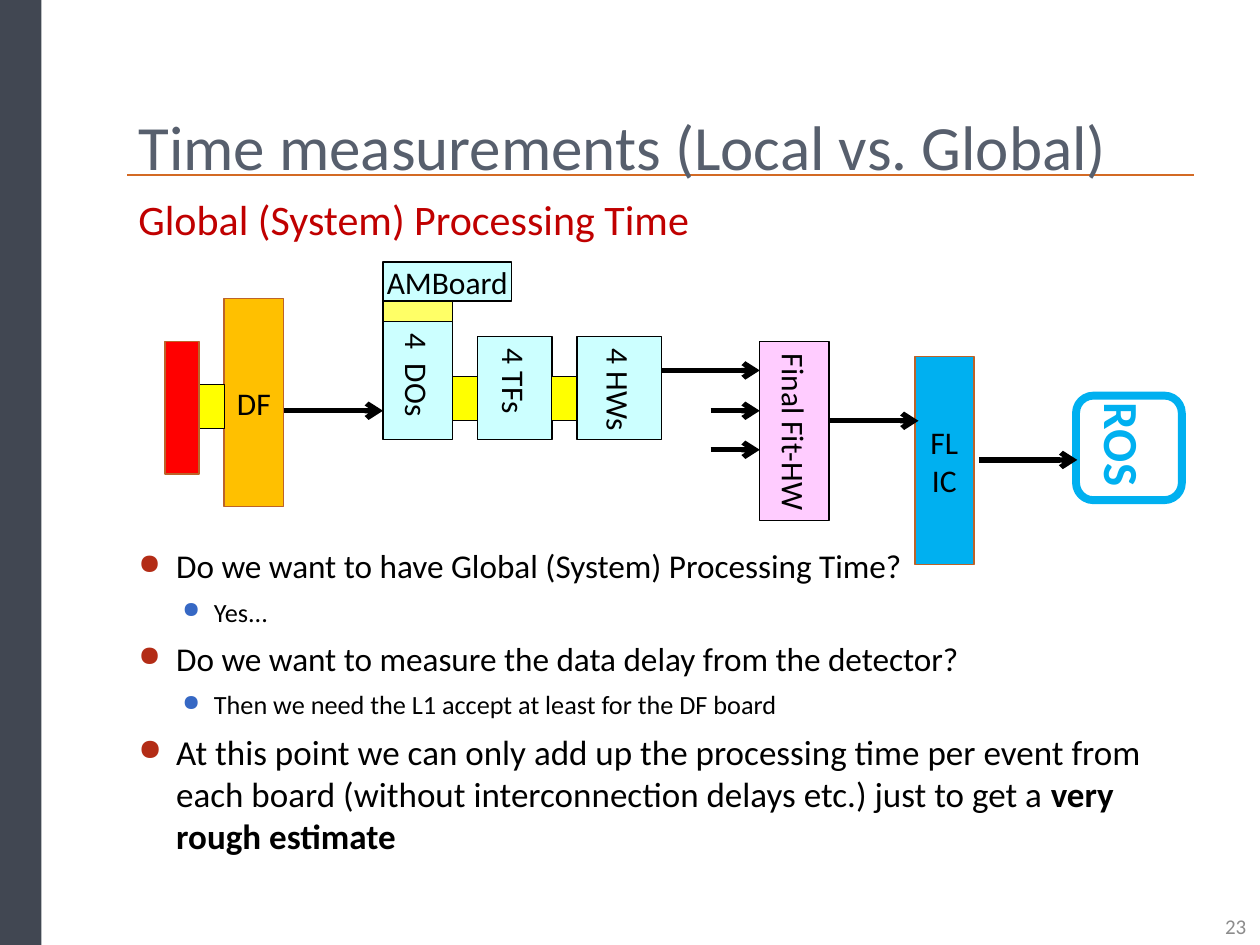
from pptx import Presentation
from pptx.dml.color import RGBColor
from pptx.enum import shapes, text
from pptx.oxml.ns import qn
from pptx.util import Inches, Pt
from lxml import etree

BLACK = RGBColor(0, 0, 0)
SLATE = RGBColor(0x41, 0x47, 0x52)
TITLE_GREY = RGBColor(0x57, 0x5F, 0x6D)
PAGE_GREY = RGBColor(0x8C, 0x8C, 0x8C)
RULE_ORANGE = RGBColor(0xD3, 0x6A, 0x24)
BROWN = RGBColor(0xBC, 0x63, 0x29)
CRIMSON = RGBColor(0xC0, 0, 0)
PINK = RGBColor(0xFF, 0xCC, 0xFF)
CYAN = RGBColor(0xCC, 0xFF, 0xFF)
YELLOW = RGBColor(0xFF, 0xFF, 0)
PALE_YELLOW = RGBColor(0xFF, 0xFF, 0x66)
AMBER = RGBColor(0xFF, 0xC0, 0)
SKY = RGBColor(0, 0xB0, 0xF0)
RED = RGBColor(0xFF, 0, 0)

# Boards and links, back to front: label, box, fill, line, line width, vertical, wrap
BOARDS = [
    ("Final Fit-HW", (6.03, 2.71, 0.55, 1.42), PINK, BLACK, 0.75, True, False),
    ("4  DOs", (3.04, 2.55, 0.55, 0.94), CYAN, BLACK, 0.75, True, False),
    ("AMBoard", (3.04, 2.08, 1.02, 0.31), CYAN, BLACK, 0.75, False, False),
    ("", (3.59, 2.99, 0.2, 0.35), YELLOW, BLACK, 0.75, False, True),
    ("4 TFs", (3.79, 2.67, 0.59, 0.82), CYAN, BLACK, 0.75, True, False),
    ("", (4.38, 2.99, 0.24, 0.35), YELLOW, BLACK, 0.75, False, True),
    ("4 HWs", (4.58, 2.67, 0.67, 0.82), CYAN, BLACK, 0.75, True, False),
    ("", (3.04, 2.39, 0.55, 0.16), PALE_YELLOW, BLACK, 0.75, False, True),
    ("DF", (1.78, 2.37, 0.47, 1.65), AMBER, BROWN, 1, False, True),
    ("FLIC", (7.26, 2.83, 0.47, 1.65), SKY, BROWN, 1, False, True),
    ("", (1.58, 3.05, 0.2, 0.35), YELLOW, BLACK, 0.75, False, True),
    ("", (1.31, 2.71, 0.27, 1.05), RED, BROWN, 1, False, True),
]
# Data flow arrows: start x, end x, y
ARROWS = [(2.25, 3.04, 3.26), (5.25, 6.03, 2.94), (5.64, 6.03, 3.26),
          (5.64, 6.03, 3.57), (6.59, 7.29, 3.34), (7.77, 8.55, 3.65)]
# Level, size, runs of (text, bold)
POINTS = [
    (0, 19, [("Do we want to have Global (System) Processing Time?", False)]),
    (1, 15, [("Yes...", False)]),
    (0, 19, [("Do we want to measure the data delay from the detector?", False)]),
    (1, 15, [("Then we need the L1 accept at least for the DF board", False)]),
    (0, 20, [("At this point we can only add up the processing time per event from "
              "each board (without interconnection delays etc.) just to get a ", False),
             ("very rough estimate", True)]),
]
# Per level: left margin, hanging indent, bullet colour
LEVELS = [(0.3, -0.3, "B32C16"), (0.6, -0.25, "3668C4")]

prs = Presentation()
prs.slide_width, prs.slide_height = Inches(10), Inches(7.5)
slide = prs.slides.add_slide(prs.slide_layouts[6])


def write(paragraph, words, size, color, bold=False):
    run = paragraph.add_run()
    run.text = words
    run.font.color.rgb = color
    for name, value in {"name": "Calibri", "size": Pt(size), "bold": bold}.items():
        setattr(run.font, name, value)


def add_box(kind, box, fill=None, line=None, width=0.75):
    part = slide.shapes.add_shape(kind, *map(Inches, box))
    part.shadow.inherit = False
    if fill is None:
        part.fill.background()
    else:
        part.fill.solid()
        part.fill.fore_color.rgb = fill
    if line is None:
        part.line.fill.background()
    else:
        part.line.color.rgb = line
        part.line.width = Pt(width)
    return part


def add_line(start, end, color, width, arrow=False):
    line = slide.shapes.add_connector(shapes.MSO_CONNECTOR.STRAIGHT,
                                      *map(Inches, start + end))
    line.line.color.rgb = color
    line.line.width = Pt(width)
    if arrow:
        etree.SubElement(line.line._get_or_add_ln(), qn("a:tailEnd"), type="arrow")
    etree.SubElement(line._element.spPr, qn("a:effectLst"))


def add_text(box, words="", size=18, color=BLACK, bold=False, align=text.PP_ALIGN.LEFT,
             **frame_format):
    label = slide.shapes.add_textbox(*map(Inches, box))
    frame = label.text_frame
    for name, value in ({"word_wrap": True} | frame_format).items():
        setattr(frame, name, value)
    frame.paragraphs[0].alignment = align
    if words:
        write(frame.paragraphs[0], words, size, color, bold)
    return label


def add_bullet(paragraph, level):
    margin, indent, color = LEVELS[level]
    props = paragraph._p.get_or_add_pPr()
    props.set("marL", str(Inches(margin)))
    props.set("indent", str(Inches(indent)))
    bullet_color = etree.SubElement(props, qn("a:buClr"))
    etree.SubElement(bullet_color, qn("a:srgbClr"), val=color)
    etree.SubElement(props, qn("a:buSzPct"), val="85000")
    etree.SubElement(props, qn("a:buChar"), char="●")


# Side band, title and rule
add_box(shapes.MSO_SHAPE.RECTANGLE, (0, 0, 0.33, 7.5), SLATE)
add_line((1.01, 1.39), (9.48, 1.39), RULE_ORANGE, 0.75)
add_text((1, 0.3, 8.5, 1.25), "Time measurements (Local vs. Global)", 36, TITLE_GREY,
         vertical_anchor=text.MSO_ANCHOR.BOTTOM, margin_bottom=Inches(0.1))

# Heading and bullet points
heading = add_text((1, 1.49, 8.5, 0.55), "Global (System) Processing Time", 24, CRIMSON)
heading.text_frame.paragraphs[0].space_before = Pt(3)
body = add_text((1, 4.28, 8.5, 2.9)).text_frame
for i, (level, size, runs) in enumerate(POINTS):
    point = body.add_paragraph() if i else body.paragraphs[0]
    for name, value in {"level": level, "space_before": Pt(3), "space_after": Pt(3)}.items():
        setattr(point, name, value)
    add_bullet(point, level)
    for words, bold in runs:
        write(point, words, size, BLACK, bold)

# Processing chain
for label, box, fill, line, width, vertical, wrap in BOARDS:
    board = add_box(shapes.MSO_SHAPE.RECTANGLE, box, fill, line, width)
    if label:
        frame = board.text_frame
        frame.word_wrap = wrap
        frame.vertical_anchor = text.MSO_ANCHOR.MIDDLE
        frame.paragraphs[0].alignment = text.PP_ALIGN.CENTER
        write(frame.paragraphs[0], label, 18, BLACK)
        if vertical:
            frame._txBody.bodyPr.set("vert", "eaVert")

# Readout at the end of the chain
add_box(shapes.MSO_SHAPE.ROUNDED_RECTANGLE, (8.54, 3.14, 0.84, 0.83), None, SKY, 4.5)
readout = add_text((8.48, 3.25, 0.87, 0.57), "ROS", 28, SKY, True, word_wrap=False)
readout.rotation = 90

for start_x, end_x, y in ARROWS:
    add_line((start_x, y), (end_x, y), BLACK, 3, arrow=True)

# Page number
add_text((7.66, 7.15, 2.33, 0.4), "23", 12, PAGE_GREY, align=text.PP_ALIGN.RIGHT,
         vertical_anchor=text.MSO_ANCHOR.MIDDLE)

prs.save("out.pptx")
